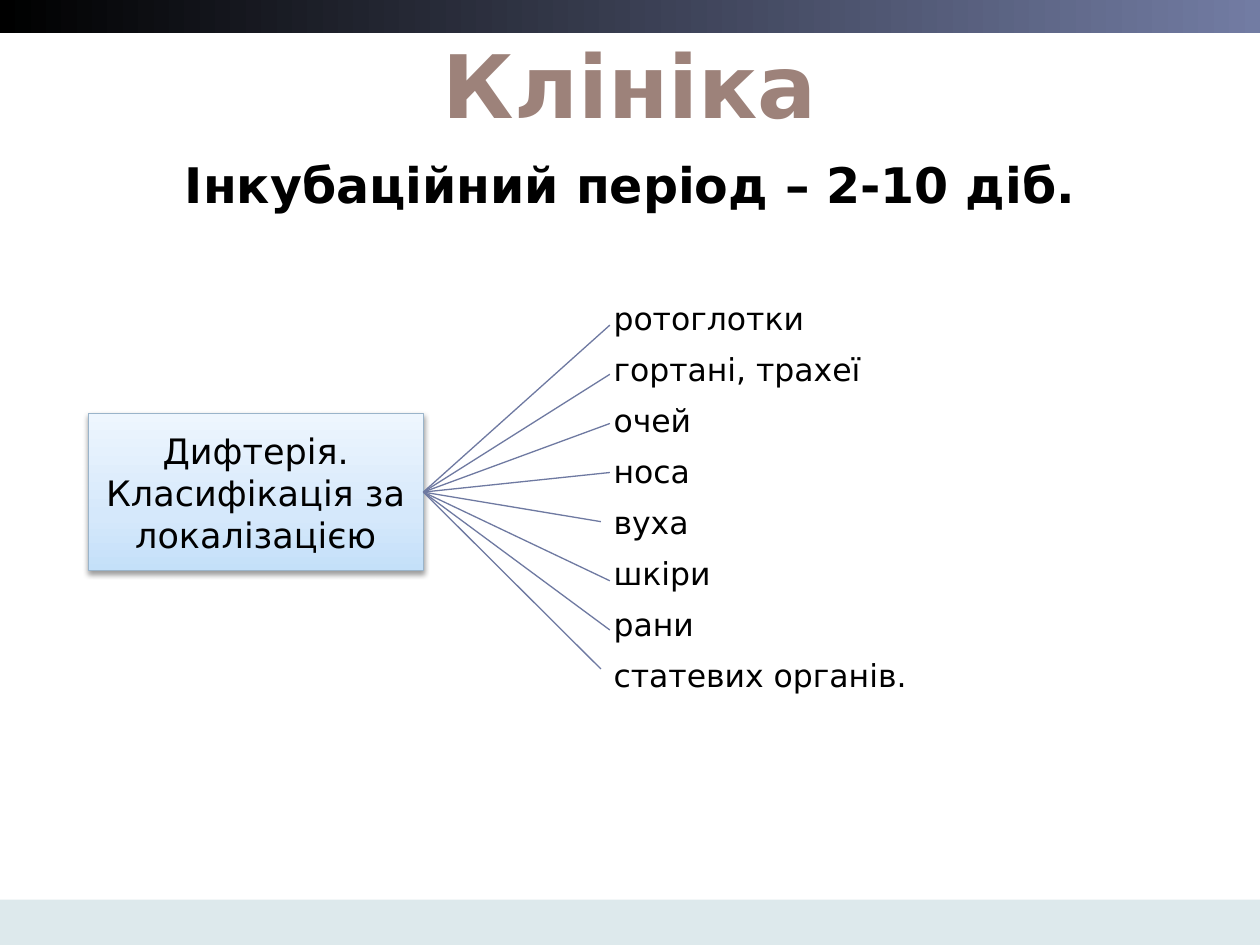
import copy
import lxml.etree
import pptx
import pptx.util
import pptx.dml.color
import pptx.enum.shapes
import pptx.enum.text
import pptx.oxml
import pptx.oxml.ns

Pt = pptx.util.Pt
Rgb = pptx.dml.color.RGBColor.from_string
qn = pptx.oxml.ns.qn
RECT = pptx.enum.shapes.MSO_SHAPE.RECTANGLE
LINE = pptx.enum.shapes.MSO_CONNECTOR.STRAIGHT
CENTER = pptx.enum.text.PP_ALIGN.CENTER
MIDDLE = pptx.enum.text.MSO_ANCHOR.MIDDLE

# Content
TITLE = "Клініка"
PERIOD = "Інкубаційний період – 2-10 діб."
TOPIC = "Дифтерія.\nКласифікація за локалізацією"
# Each site with the end point of its line
SITES = [
    ("ротоглотки", 348.5, 185.8),
    ("гортані, трахеї", 348.5, 213.9),
    ("очей", 348.5, 242),
    ("носа", 348.5, 270),
    ("вуха", 343.4, 298.1),
    ("шкіри", 348.5, 331.9),
    ("рани", 348.5, 360),
    ("статевих органів.", 343.4, 382.3),
]
FONT = "DejaVu Sans"
COLORS = {"text": "000000", "title": "9D827A", "foot": "DDE9EC",
          "edge": "9AB4CA", "line": "6E79A1"}
BAR = [(0, "000000"), (1, "727CA3")]
SKY = [(0, "C4E0F9"), (0.35, "D5E8FB"), (1, "EEF6FE")]
WIDE, HIGH = 720, 540
BOX = (50.4, 236.2, 191.5, 90)
TABLE = (343.4, 168.5, 202.3)
ROW = 29.2

deck = pptx.Presentation()
deck.slide_width, deck.slide_height = Pt(WIDE), Pt(HIGH)
slide = deck.slides.add_slide(deck.slide_layouts[6])
shapes = slide.shapes


def style(frame, size, color="text", bold=False, align=None):
    for par in frame.paragraphs:
        par.alignment = align
        for run in par.runs:
            font = run.font
            font.name, font.size, font.bold = FONT, Pt(size), bold
            font.color.rgb = Rgb(COLORS[color])


def add_rect(*place):
    rect = shapes.add_shape(RECT, *map(Pt, place))
    rect.shadow.inherit = False
    rect.line.fill.background()
    return rect


def blend(shape, stops, angle):
    shape.fill.gradient()
    shape.fill.gradient_angle = angle
    group = shape._element.spPr.find(".//" + qn("a:gsLst"))
    for _ in stops[2:]:
        group.append(copy.deepcopy(group[0]))
    for stop, (at, color) in zip(shape.fill.gradient_stops, stops):
        stop.position = at
        stop.color.rgb = Rgb(color)


def add_label(text, place, size, **look):
    frame = shapes.add_textbox(*map(Pt, place)).text_frame
    frame.word_wrap = True
    frame.text = text
    style(frame, size, bold=True, align=CENTER, **look)
    return frame


# Bands at the foot and the top
foot = add_rect(0, 514, WIDE, 26)
foot.fill.solid()
foot.fill.fore_color.rgb = Rgb(COLORS["foot"])
blend(add_rect(0, 0, WIDE, 18.8), BAR, 0)

# Headings
add_label(TITLE, (36, 25.2, 648, 44.6), 50, color="title").vertical_anchor = MIDDLE
add_label(PERIOD, (36, 85, 648, 413), 28)

# Topic box with a soft shadow
box = add_rect(*BOX)
blend(box, SKY, 90)
box.line.color.rgb = Rgb(COLORS["edge"])
box.line.width = Pt(0.75)
shade = pptx.oxml.parse_xml(
    f'<a:outerShdw {pptx.oxml.ns.nsdecls("a")} blurRad="{Pt(3.1)}" '
    f'dist="{Pt(1.6)}" dir="5400000" rotWithShape="0"><a:srgbClr val="000000">'
    '<a:alpha val="38000"/></a:srgbClr></a:outerShdw>')
box._element.spPr.find(qn("a:effectLst")).append(shade)
box.text_frame.word_wrap = True
box.text_frame.vertical_anchor = MIDDLE
box.text_frame.text = TOPIC
style(box.text_frame, 20, align=CENTER)

# Table of sites
left, top, width = TABLE
table = shapes.add_table(len(SITES), 1, Pt(left), Pt(top), Pt(width),
                         Pt(ROW * len(SITES))).table
table.first_row = table.horz_banding = False
for row, (site, _, _) in zip(table.rows, SITES):
    row.height = Pt(ROW)
    cell = row.cells[0]
    cell.fill.background()
    cell.text_frame.text = site
    style(cell.text_frame, 18)

# Lines that fan out from the box
start = BOX[0] + BOX[2], BOX[1] + BOX[3] / 2
for _, *end in SITES:
    ray = shapes.add_connector(LINE, *map(Pt, (*start, *end)))
    ray.line.color.rgb = Rgb(COLORS["line"])
    ray.line.width = Pt(0.75)
    lxml.etree.SubElement(ray._element.spPr, qn("a:effectLst"))

deck.save("out.pptx")
